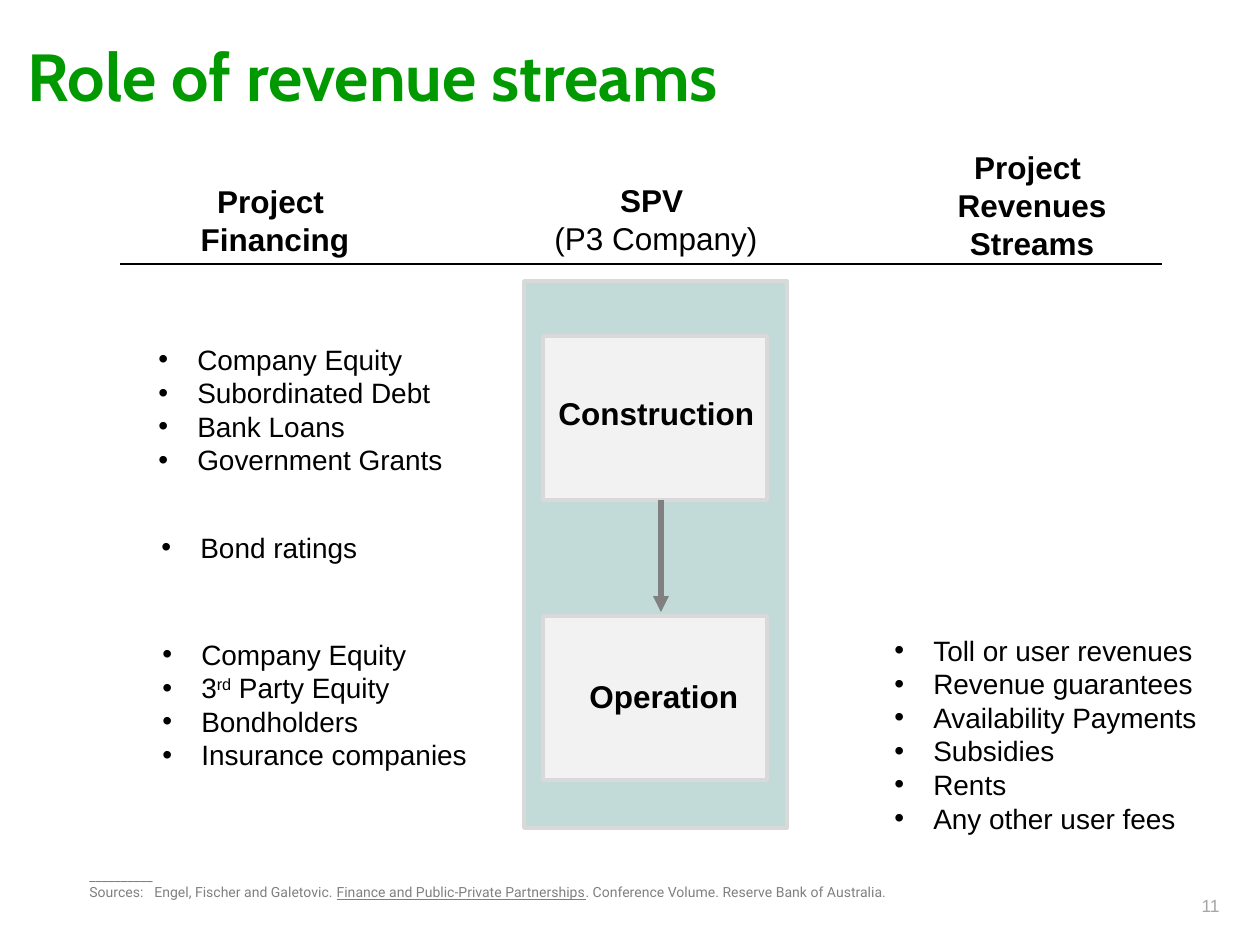
import pptx
import pptx.dml.color
import pptx.enum.shapes
import pptx.enum.text
import pptx.oxml.ns
import pptx.util
from lxml import etree

SCALE = 914400 / 126
ALIGN = pptx.enum.text.PP_ALIGN
INDENT = 39


def px(length):
    """Turn a length in px into EMU."""
    return pptx.util.Emu(round(length * SCALE))


def color(hex_code):
    """Turn a hex string into a colour."""
    return pptx.dml.color.RGBColor.from_string(hex_code)


def add_element(parent, tag, **attributes):
    """Append a drawing element to a parent element."""
    return etree.SubElement(parent, pptx.oxml.ns.qn(tag), attributes)


def format_runs(paragraph, size, hex_code="000000", font="Arial", bold=False):
    """Give every run of a paragraph the same look."""
    for run in paragraph.runs:
        run.font.name = font
        run.font.size = pptx.util.Pt(size)
        run.font.bold = bold
        run.font.color.rgb = color(hex_code)


def add_text(slide, box, lines, size, align=ALIGN.LEFT, wrap=False, **look):
    """Add a text box of lines, each a list of run texts, and return its paragraphs."""
    frame = slide.shapes.add_textbox(*map(px, box)).text_frame
    frame.word_wrap = wrap
    frame.auto_size = pptx.enum.text.MSO_AUTO_SIZE.SHAPE_TO_FIT_TEXT
    for index, texts in enumerate(lines):
        paragraph = frame.add_paragraph() if index else frame.paragraphs[0]
        paragraph.alignment = align
        for text in texts:
            paragraph.add_run().text = text
        format_runs(paragraph, size, **look)
    return frame.paragraphs


def add_title(slide, text):
    """Place and format the slide title."""
    title = slide.shapes.title
    title.left, title.top, title.width, title.height = map(px, (15, 34, 1230, 82))
    title.text_frame.text = text
    title.text_frame.vertical_anchor = pptx.enum.text.MSO_ANCHOR.MIDDLE
    paragraph = title.text_frame.paragraphs[0]
    paragraph.alignment = ALIGN.LEFT
    format_runs(paragraph, 38, "009900", "Cabin", True)


def add_heading(slide, box, lines):
    """Add a centred bold column heading and return its paragraphs."""
    return add_text(slide, box, [[line] for line in lines], 18, ALIGN.CENTER, True, bold=True)


def add_bullets(slide, box, items):
    """Add a bulleted list and return its paragraphs."""
    paragraphs = add_text(slide, box, items, 16)
    for paragraph in paragraphs:
        properties = paragraph._p.get_or_add_pPr()
        properties.set("marL", str(px(INDENT)))
        properties.set("indent", str(px(-INDENT)))
        add_element(properties, "a:buFont", typeface="Arial")
        add_element(properties, "a:buChar", char="•")
    return paragraphs


def add_panel(slide, box, fill):
    """Add a rectangle with a light grey border."""
    panel = slide.shapes.add_shape(pptx.enum.shapes.MSO_SHAPE.RECTANGLE, *map(px, box))
    panel.shadow.inherit = False
    panel.fill.solid()
    panel.fill.fore_color.rgb = color(fill)
    panel.line.color.rgb = color("D9D9D9")
    panel.line.width = pptx.util.Pt(2)


def add_line(slide, ends, hex_code, width, arrow=False):
    """Add a straight line, with an arrowhead at its end if wanted."""
    line = slide.shapes.add_connector(pptx.enum.shapes.MSO_CONNECTOR.STRAIGHT, *map(px, ends))
    line.line.color.rgb = color(hex_code)
    line.line.width = pptx.util.Pt(width)
    if arrow:
        add_element(line.line._get_or_add_ln(), "a:tailEnd", type="triangle")
    add_element(line._element.spPr, "a:effectLst")


def add_sources(slide):
    """Add the source note with its underlined book title."""
    citation = ["Sources:\tEngel, Fischer and Galetovic. ",
                "Finance and Public-Private Partnerships",
                ". Conference Volume. Reserve Bank of Australia."]
    note = add_text(slide, (77, 861, 850, 47), [["__________"], citation], 8,
                    hex_code="808080", font="Roboto")[1]
    note.runs[1].font.underline = True
    tabs = add_element(note._p.get_or_add_pPr(), "a:tabLst")
    add_element(tabs, "a:tab", pos=str(px(65)), algn="l")


def main():
    """Build the slide and save it."""
    presentation = pptx.Presentation()
    presentation.slide_width, presentation.slide_height = px(1260), px(945)
    slide = presentation.slides.add_slide(presentation.slide_layouts[5])
    add_title(slide, "Role of revenue streams")

    add_panel(slide, (524, 281, 263, 547), "C2DAD8")
    for top in (336, 616):
        add_panel(slide, (543, top, 224, 164), "F2F2F2")
    add_text(slide, (546, 388, 223, 50), [["Construction"]], 18, bold=True)
    add_text(slide, (577, 671, 175, 50), [["Operation"]], 18, bold=True)
    add_line(slide, (661, 500, 661, 612), "808080", 3, arrow=True)

    company = add_heading(slide, (527, 175, 258, 89), ["SPV ", "(P3 Company)"])[1]
    company.runs[0].font.bold = False
    add_heading(slide, (146, 176, 258, 89), ["Project ", "Financing"])
    add_heading(slide, (903, 142, 258, 127), ["Project ", "Revenues", "Streams"])
    add_line(slide, (120, 264, 1162, 264), "000000", 0.75)

    add_bullets(slide, (146, 336, 314, 149), [
        ["Company Equity"], ["Subordinated Debt"], ["Bank Loans"], ["Government Grants"]])
    add_bullets(slide, (149, 524, 232, 47), [["Bond ratings"]])
    investors = add_bullets(slide, (150, 631, 341, 149), [
        ["Company Equity"], ["3", "rd", " Party Equity"], ["Bondholders"],
        ["Insurance companies"]])
    investors[1].runs[1].font._element.set("baseline", "30000")
    add_bullets(slide, (882, 627, 339, 217), [
        ["Toll or user revenues"], ["Revenue guarantees"], ["Availability Payments"],
        ["Subsidies"], ["Rents"], ["Any other user fees"]])

    add_sources(slide)
    add_text(slide, (1110, 889, 122, 34), [["11"]], 10, ALIGN.RIGHT, True, hex_code="A6A6A6")
    presentation.save("out.pptx")


if __name__ == "__main__":
    main()
